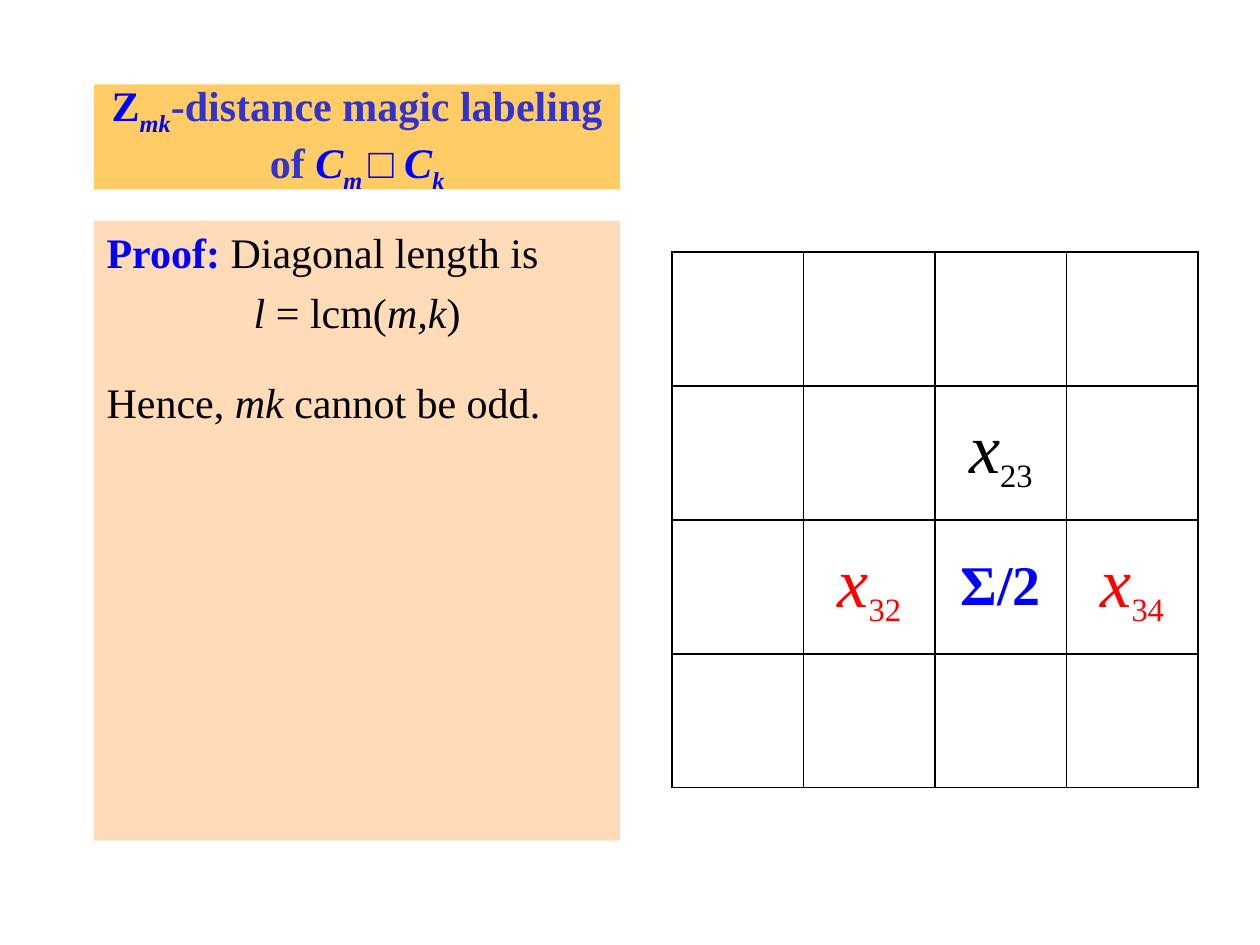
from dataclasses import dataclass

from lxml import etree
from pptx import Presentation
from pptx import util as u
from pptx.dml.color import RGBColor
from pptx.enum import shapes, text
from pptx.oxml.ns import qn


@dataclass(frozen=True)
class Theme:
    font: str = "Times New Roman"
    title_fill: str = "FFCC66"
    proof_fill: str = "FFDBB7"
    ink: str = "000000"
    blue: str = "0000FF"
    indigo: str = "3333CC"
    red: str = "FF0000"
    body_size: int = 24
    symbol_size: int = 40
    index_size: int = 32


class SlideBuilder:
    def __init__(self, slide, theme):
        self.slide = slide
        self.theme = theme

    def set_runs(self, paragraph, runs, size=None, centred=True, before=0):
        paragraph.alignment = text.PP_ALIGN.CENTER if centred else text.PP_ALIGN.LEFT
        paragraph.space_before = u.Pt(before)
        paragraph.font.name = self.theme.font
        if size:
            paragraph.font.size = u.Pt(size)
        for wording, color, marks, *own_size in runs:
            run = paragraph.add_run()
            run.text = wording
            run.font.color.rgb = RGBColor.from_string(color)
            run.font.bold = "b" in marks
            run.font.italic = "i" in marks
            if own_size:
                run.font.size = u.Pt(own_size[0])
            if "s" in marks:
                run._r.get_or_add_rPr().set("baseline", "-25000")

    def panel(self, left, top, width, height, fill, anchor, lines):
        panel = self.slide.shapes.add_shape(
            shapes.MSO_SHAPE.RECTANGLE, u.Cm(left), u.Cm(top), u.Cm(width), u.Cm(height))
        panel.shadow.inherit = False
        panel.fill.solid()
        panel.fill.fore_color.rgb = RGBColor.from_string(fill)
        panel.line.fill.background()
        frame = panel.text_frame
        frame.word_wrap = True
        frame.vertical_anchor = anchor
        for row, (runs, centred, before) in enumerate(lines):
            paragraph = frame.add_paragraph() if row else frame.paragraphs[0]
            self.set_runs(paragraph, runs, self.theme.body_size, centred, before)

    def border(self, cell):
        properties = cell._tc.get_or_add_tcPr()
        for place, side in enumerate(("lnL", "lnR", "lnT", "lnB")):
            line = etree.Element(qn(f"a:{side}"), w=str(u.Pt(1)))
            fill = etree.SubElement(line, qn("a:solidFill"))
            etree.SubElement(fill, qn("a:srgbClr"), val=self.theme.ink)
            properties.insert(place, line)

    def grid(self, left, top, width, height, count, entries):
        grid = self.slide.shapes.add_table(
            count, count, u.Cm(left), u.Cm(top), u.Cm(width), u.Cm(height)).table
        grid.first_row = grid.horz_banding = False
        for band in grid.columns:
            band.width = u.Cm(width / count)
        for band in grid.rows:
            band.height = u.Cm(height / count)
        for cell in grid.iter_cells():
            cell.fill.background()
            cell.vertical_anchor = text.MSO_ANCHOR.MIDDLE
            cell.margin_left = cell.margin_right = u.Cm(0.13)
            cell.margin_top = cell.margin_bottom = u.Cm(0.13)
            self.border(cell)
        for (row, column), runs in entries.items():
            self.set_runs(grid.cell(row - 1, column - 1).text_frame.paragraphs[0], runs)


def main():
    deck = Presentation()
    deck.slide_width, deck.slide_height = u.Cm(25.4), u.Cm(19.05)
    theme = Theme()
    builder = SlideBuilder(deck.slides.add_slide(deck.slide_layouts[6]), theme)
    ink, blue, red = theme.ink, theme.blue, theme.red

    heading = [
        ("Z", blue, "b"), ("mk", blue, "bis"),
        ("-distance magic labeling of ", theme.indigo, "b"),
        ("C", blue, "bi"), ("m ", blue, "bis"), ("□ ", blue, ""),
        ("C", blue, "bi"), ("k", blue, "bis"),
    ]
    builder.panel(1.9, 1.7, 10.6, 2.12, theme.title_fill, text.MSO_ANCHOR.MIDDLE,
                  [(heading, True, 0)])

    proof = [
        ([("Proof: ", blue, "b"), ("Diagonal length is", ink, "")], False, 2),
        ([("l", ink, "i"), (" = lcm(", ink, ""), ("m,k", ink, "i"), (")", ink, "")],
         True, 5.5),
        ([("Hence, ", ink, ""), ("mk", ink, "i"), (" cannot be odd.", ink, "")],
         False, 22.5),
    ]
    builder.panel(1.9, 4.45, 10.6, 12.5, theme.proof_fill, text.MSO_ANCHOR.TOP, proof)

    def x_entry(index, color):
        return [("x", color, "i", theme.symbol_size),
                (index, color, "s", theme.index_size)]

    builder.grid(13.55, 5.08, 10.6, 10.8, 4, {
        (2, 3): x_entry("23", ink),
        (3, 2): x_entry("32", red),
        (3, 3): [("Σ/2", blue, "b", theme.index_size)],
        (3, 4): x_entry("34", red),
    })
    deck.save("out.pptx")


if __name__ == "__main__":
    main()
